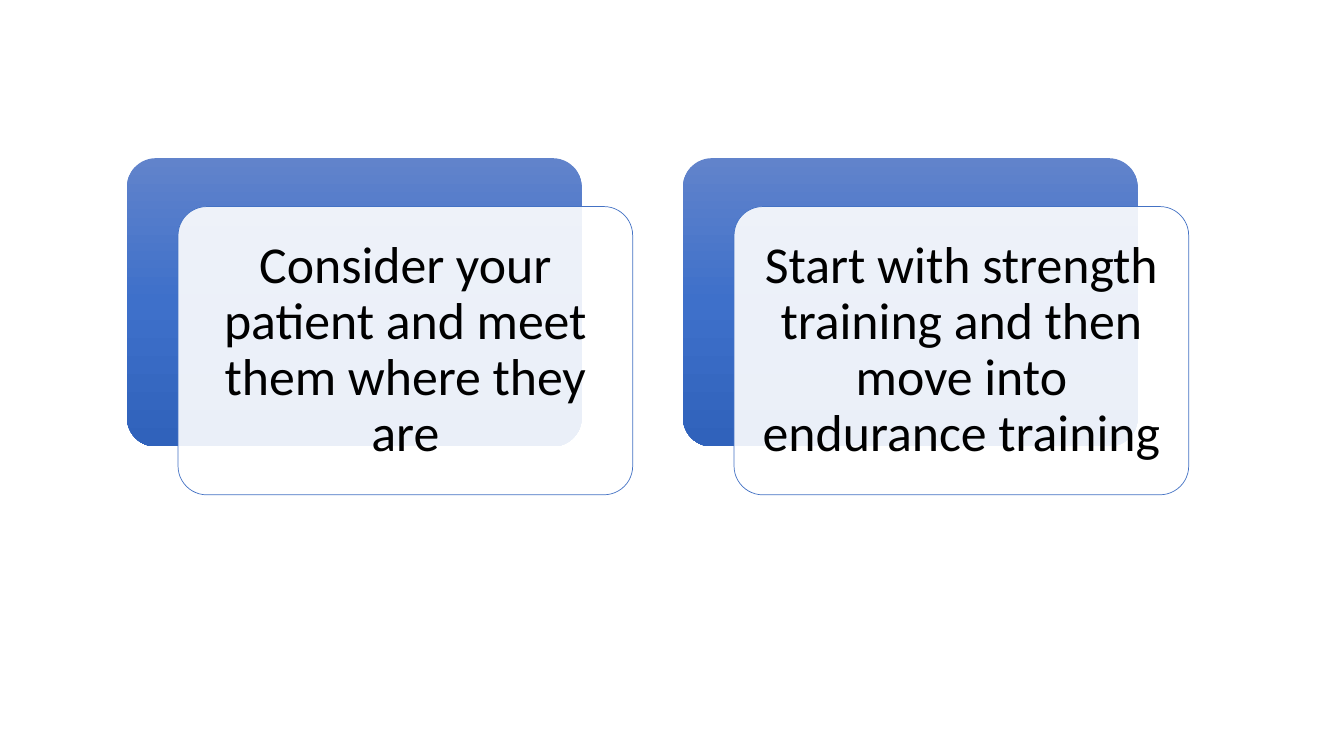
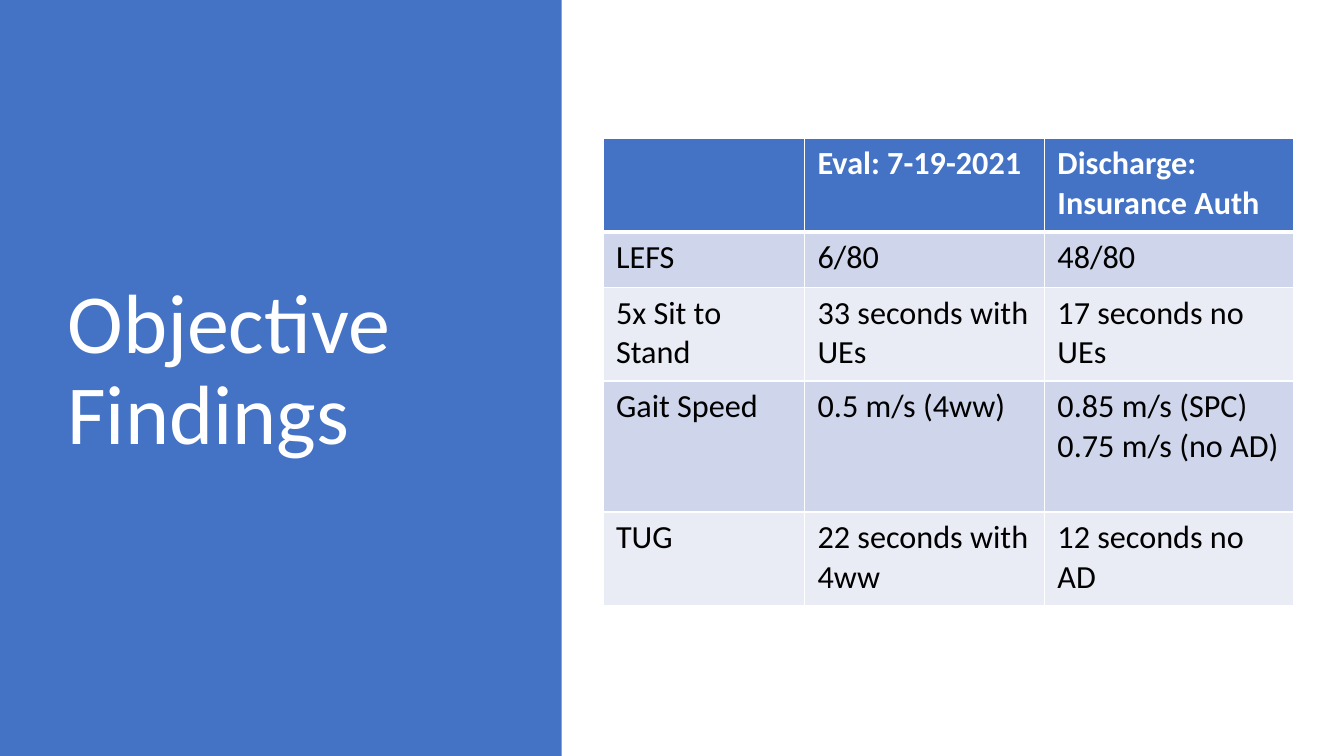
"""Build two slides: paired recommendation cards and a table of objective findings."""
from copy import deepcopy

from lxml import etree
from pptx import Presentation
from pptx import util as u
from pptx.dml.color import RGBColor
from pptx.enum import shapes, text
from pptx.oxml.ns import qn

BLUE = RGBColor(0x44, 0x72, 0xC4)
WHITE = RGBColor(0xFF, 0xFF, 0xFF)
BLACK = RGBColor(0x00, 0x00, 0x00)
BANDS = [RGBColor(0xE9, 0xEB, 0xF5), RGBColor(0xCF, 0xD5, 0xEA)]
GRADIENT = [
    (0, RGBColor(0x61, 0x83, 0xCB)),
    (0.5, RGBColor(0x3E, 0x70, 0xCA)),
    (1, RGBColor(0x30, 0x62, 0xBB)),
]
FONT = "Calibri"

prs = Presentation()
prs.slide_width, prs.slide_height = u.Inches(13.33), u.Inches(7.5)
blank = prs.slide_layouts[6]


def box(x, y, w, h):
    """Turn percentages of the slide into left, top, width and height."""
    W, H = prs.slide_width, prs.slide_height
    return [int(share * side / 100) for share, side in zip((x, y, w, h), (W, H, W, H))]


def style(tf, size, color, bold=False, spacing=None, align=None):
    """Format every paragraph and run of a text frame."""
    for p in tf.paragraphs:
        p.line_spacing, p.alignment = spacing, align
        for r in p.runs:
            r.font.name, r.font.size, r.font.bold = FONT, u.Pt(size), bold
            r.font.color.rgb = color


slide = prs.slides.add_slide(blank)
cards = [
    "Consider your patient and meet them where they are",
    "Start with strength training and then move into endurance training",
]
left, top, width, height = 9.45, 20.93, 33.83, 38.13
step, shift_x, shift_y = 41.37, 3.8, 6.4
for i, words in enumerate(cards):
    x = left + i * step
    back = slide.shapes.add_shape(
        shapes.MSO_SHAPE.ROUNDED_RECTANGLE, *box(x, top, width, height))
    back.fill.gradient()
    back.fill.gradient_angle = 270
    gs_list = back.element.spPr.find(".//" + qn("a:gsLst"))
    gs_list.append(deepcopy(gs_list[-1]))
    for stop, (position, color) in zip(back.fill.gradient_stops, GRADIENT):
        stop.position, stop.color.rgb = position, color
    back.line.fill.background()

    card = slide.shapes.add_shape(
        shapes.MSO_SHAPE.ROUNDED_RECTANGLE,
        *box(x + shift_x, top + shift_y, width, height))
    card.fill.solid()
    card.fill.fore_color.rgb = WHITE
    white = card.element.spPr.find(qn("a:solidFill"))[0]
    etree.SubElement(white, qn("a:alpha"), val="90000")
    card.line.color.rgb, card.line.width = BLUE, u.Pt(0.5)
    for sp in (back, card):
        sp.adjustments[0] = 0.1
        sp.shadow.inherit = False

    tf = card.text_frame
    tf.text = words
    tf.word_wrap = True
    tf.vertical_anchor = text.MSO_ANCHOR.MIDDLE
    tf.margin_left = tf.margin_right = u.Inches(0.15)
    tf.margin_top = tf.margin_bottom = u.Inches(0.15)
    style(tf, 37, BLACK, spacing=0.9, align=text.PP_ALIGN.CENTER)

slide = prs.slides.add_slide(blank)
panel = slide.shapes.add_shape(shapes.MSO_SHAPE.RECTANGLE, *box(0, 0, 41.79, 100))
panel.fill.solid()
panel.fill.fore_color.rgb = BLUE
panel.line.fill.background()
panel.shadow.inherit = False

title = slide.shapes.add_textbox(*box(4.28, 9.07, 31.2, 80.27))
tf = title.text_frame
tf.text = "Objective Findings"
tf.word_wrap = True
tf.vertical_anchor = text.MSO_ANCHOR.MIDDLE
style(tf, 60, WHITE, spacing=0.9)

rows = [
    ["", "Eval: 7-19-2021", "Discharge: Insurance Auth"],
    ["LEFS", "6/80", "48/80"],
    ["5x Sit to Stand", "33 seconds with UEs", "17 seconds no UEs"],
    ["Gait Speed", "0.5 m/s (4ww)", "0.85 m/s (SPC)\n0.75 m/s (no AD)"],
    ["TUG", "22 seconds with 4ww", "12 seconds no AD"],
]
col_shares = [15, 17.85, 18.53]
row_shares = [12.4, 7.33, 12.4, 17.33, 12.4]
table = slide.shapes.add_table(
    len(rows), len(col_shares),
    *box(44.86, 18.27, sum(col_shares), sum(row_shares))).table
for column, share in zip(table.columns, col_shares):
    column.width = int(prs.slide_width * share / 100)
for row, share in zip(table.rows, row_shares):
    row.height = int(prs.slide_height * share / 100)

for i, row in enumerate(rows):
    header = i == 0
    for j, words in enumerate(row):
        cell = table.cell(i, j)
        cell.text_frame.text = words
        cell.margin_left = cell.margin_right = u.Inches(0.13)
        cell.margin_top = cell.margin_bottom = u.Inches(0.06)
        style(cell.text_frame, 23, WHITE if header else BLACK, bold=header)
        tc_pr = cell._tc.get_or_add_tcPr()
        for side in "LRTB":
            thick = (i, side) in [(0, "B"), (1, "T")]
            ln = etree.SubElement(
                tc_pr, qn("a:ln" + side), w=str(u.Pt(3 if thick else 1)))
            fill = etree.SubElement(ln, qn("a:solidFill"))
            etree.SubElement(fill, qn("a:srgbClr"), val=str(WHITE))
        cell.fill.solid()
        cell.fill.fore_color.rgb = BLUE if header else BANDS[i % 2]

prs.save("out.pptx")
